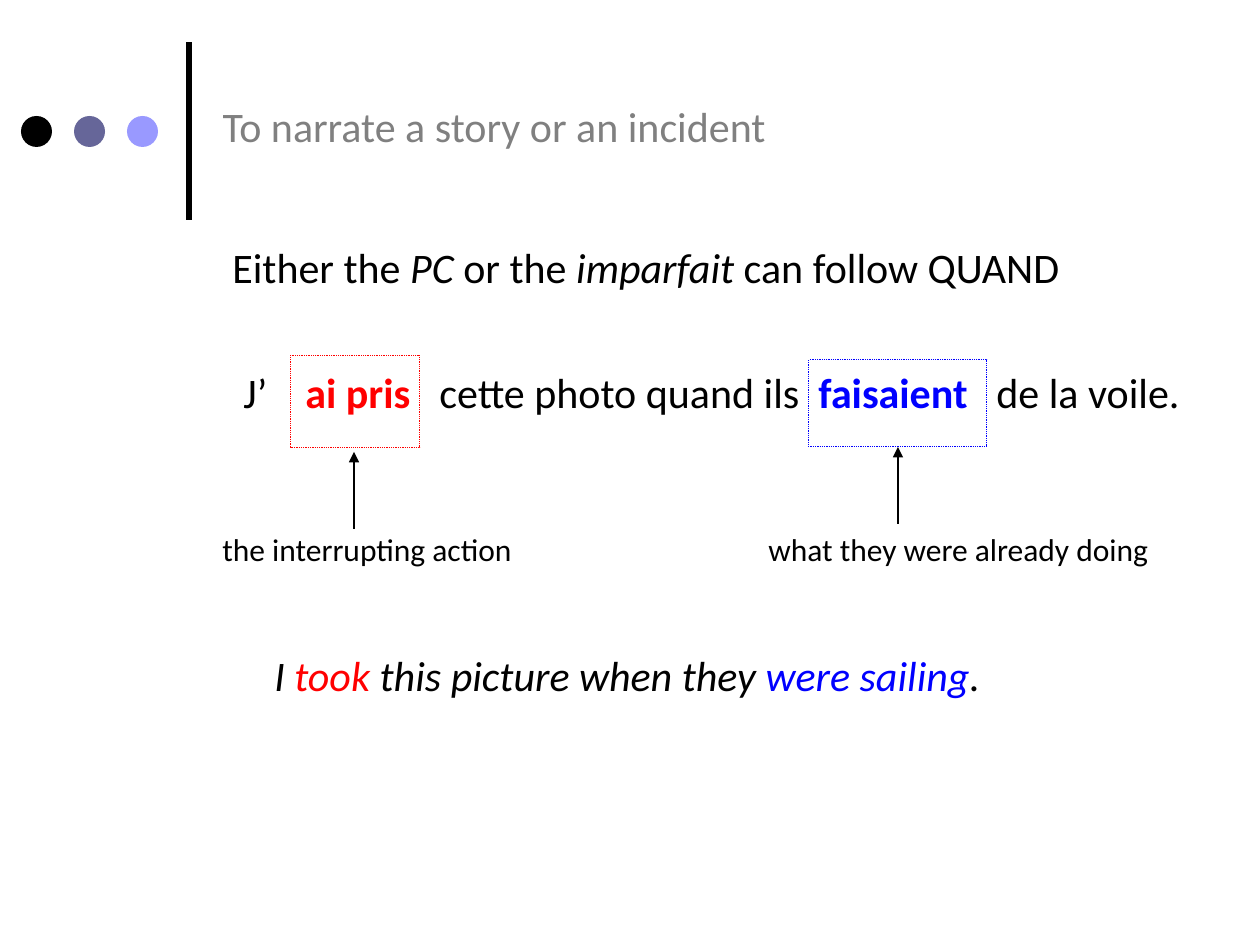
from lxml import etree
from pptx import Presentation
from pptx.dml.color import RGBColor
from pptx.enum.dml import MSO_LINE
from pptx.enum.shapes import MSO_CONNECTOR, MSO_SHAPE
from pptx.enum.text import MSO_ANCHOR, PP_ALIGN
from pptx.oxml.ns import qn
from pptx.util import Pt

PX = 914400 // 126
FONT = "Calibri"
LEFT, TOP, DOTTED = PP_ALIGN.LEFT, MSO_ANCHOR.TOP, MSO_LINE.ROUND_DOT
OVAL, RECTANGLE, STRAIGHT = MSO_SHAPE.OVAL, MSO_SHAPE.RECTANGLE, MSO_CONNECTOR.STRAIGHT
BOTTOM_SIDE = 2

BLACK = RGBColor(0x00, 0x00, 0x00)
GREY = RGBColor(0x80, 0x80, 0x80)
RED = RGBColor(0xFF, 0x00, 0x00)
BLUE = RGBColor(0x00, 0x00, 0xFF)
SLATE = RGBColor(0x66, 0x66, 0x99)
LAVENDER = RGBColor(0x99, 0x99, 0xFF)

# Runs are (text, colour, style), where style may hold "b" and "i".
TITLE = [("To narrate a story or an incident", GREY, "")]
RULE = [("Either the ", BLACK, ""), ("PC", BLACK, "i"), (" or the ", BLACK, ""),
        ("imparfait ", BLACK, "i"), ("can follow QUAND", BLACK, "")]
FRENCH = [("J’\t", BLACK, ""), ("ai pris\t", RED, "b"),
          ("cette photo quand ils\t", BLACK, ""), ("faisaient\t", BLUE, "b"),
          ("de la voile.", BLACK, "")]
FRENCH_TABS = [62, 196, 575, 753]
ENGLISH = [("I ", BLACK, "i"), ("took ", RED, "i"),
           ("this picture when they ", BLACK, "i"),
           ("were sailing", BLUE, "i"), (".", BLACK, "i")]

# Text boxes: runs, (left, top, width, height), size
TEXTS = [
    (RULE, (220, 210, 998, 95), 24),
    (FRENCH, (231, 360, 1029, 63), 24),
    (ENGLISH, (262, 643, 998, 63), 24),
    ([("the interrupting action", BLACK, "")], (210, 524, 325, 50), 18),
    ([("what they were already doing", BLACK, "")], (756, 524, 431, 50), 18),
]
DOT_COLOURS = [BLACK, SLATE, LAVENDER]
DOT_LEFT, DOT_TOP, DOT_SIZE, DOT_STEP = 21, 116, 31, 53


def emu(lengths):
    return [length * PX for length in lengths]


def write_runs(text_frame, runs, size):
    text_frame.word_wrap = True
    text_frame.vertical_anchor = TOP
    paragraph = text_frame.paragraphs[0]
    paragraph.alignment = LEFT
    for text, colour, style in runs:
        run = paragraph.add_run()
        run.text = text
        run.font.name = FONT
        run.font.size = Pt(size)
        run.font.color.rgb = colour
        run.font.bold = "b" in style
        run.font.italic = "i" in style
    return paragraph


def set_tabs(paragraph, positions):
    properties = paragraph._p.get_or_add_pPr()
    tabs = etree.SubElement(properties, qn("a:tabLst"))
    for position in positions:
        etree.SubElement(tabs, qn("a:tab"), pos=str(position * PX), algn="l")


def add_line(slide, start, end, width, arrow=False):
    line = slide.shapes.add_connector(STRAIGHT, *emu(start + end))
    line.line.color.rgb = BLACK
    line.line.width = Pt(width)
    if arrow:
        etree.SubElement(line.line._get_or_add_ln(), qn("a:tailEnd"), type="triangle")
    etree.SubElement(line._element.spPr, qn("a:effectLst"))
    return line


def add_dot(slide, left, colour):
    dot = slide.shapes.add_shape(OVAL, *emu((left, DOT_TOP, DOT_SIZE, DOT_SIZE)))
    dot.shadow.inherit = False
    dot.fill.solid()
    dot.fill.fore_color.rgb = colour
    dot.line.fill.background()


def add_verb_frame(slide, box, colour):
    frame = slide.shapes.add_shape(RECTANGLE, *emu(box))
    frame.shadow.inherit = False
    frame.fill.background()
    frame.line.color.rgb = colour
    frame.line.width = Pt(0.5)
    frame.line.dash_style = DOTTED
    return frame


def main():
    presentation = Presentation()
    presentation.slide_width, presentation.slide_height = emu((1260, 945))
    slide = presentation.slides.add_slide(presentation.slide_layouts[5])

    title = slide.shapes.title
    title.left, title.top, title.width, title.height = emu((210, 94, 1008, 63))
    write_runs(title.text_frame, TITLE, 24)

    add_line(slide, (189, 220), (189, 42), 3)
    for index, colour in enumerate(DOT_COLOURS):
        add_dot(slide, DOT_LEFT + index * DOT_STEP, colour)

    for runs, box, size in TEXTS:
        text_box = slide.shapes.add_textbox(*emu(box))
        paragraph = write_runs(text_box.text_frame, runs, size)
        if runs is RULE:
            paragraph.line_spacing = 1.5
        elif runs is FRENCH:
            set_tabs(paragraph, FRENCH_TABS)

    add_verb_frame(slide, (291, 355, 129, 92), RED)
    add_line(slide, (354, 529), (354, 452), 0.75, arrow=True)
    imparfait_frame = add_verb_frame(slide, (809, 360, 178, 87), BLUE)
    imparfait_arrow = add_line(slide, (898, 524), (898, 447), 0.75, arrow=True)
    imparfait_arrow.end_connect(imparfait_frame, BOTTOM_SIDE)

    presentation.save("out.pptx")


if __name__ == "__main__":
    main()
